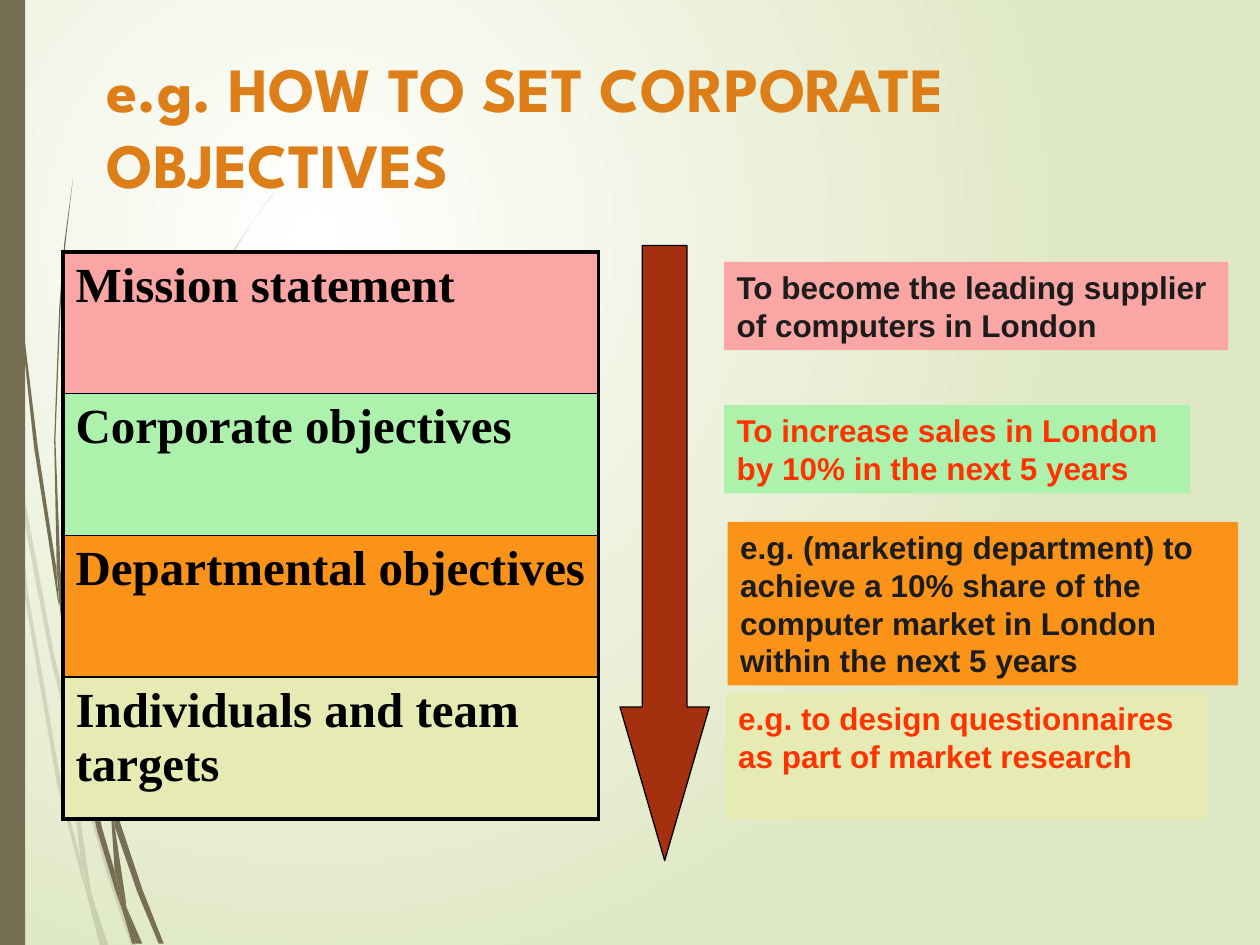
from dataclasses import dataclass

import pptx
import pptx.dml.color
import pptx.enum.dml
import pptx.enum.shapes
import pptx.enum.text
import pptx.oxml.ns
import pptx.util
from lxml import etree
from pptx.util import Cm

BROWN = "766F54"
BLACK = "000000"
DARK = "1C1C1C"
RED = "FF3300"
HUNDREDTH_INCH = Cm(2.54) / 100

# Outlines of the grass blades, in hundredths of an inch.
FAINT_BLADES = [
    [(8, 350), (6, 322), (0, 282), (0, 299), (7, 344)],
    [(40, 522), (59, 599), (59, 586), (43, 520), (10, 345), (12, 376)],
    [(64, 607), (61, 596), (61, 610), (85, 694), (104, 750), (108, 750), (88, 692)],
    [(83, 750), (86, 750), (73, 711)],
    [(64, 683), (48, 619), (22, 469), (12, 376), (8, 350), (19, 470), (45, 621),
     (64, 693), (70, 714), (69, 707)],
    [(58, 599), (60, 646), (64, 683), (67, 692), (73, 711), (72, 706), (63, 646),
     (61, 610), (61, 608)],
    [(61, 584), (76, 462), (111, 349), (159, 245), (187, 198), (201, 175), (217, 154),
     (217, 153), (201, 175), (186, 197), (158, 244), (110, 348), (75, 461), (59, 584),
     (59, 586), (61, 596)],
    [(70, 714), (79, 750), (82, 750)],
    [(61, 608), (61, 610), (61, 596), (59, 586), (58, 599)],
    [(67, 692), (65, 683), (69, 707), (70, 714), (82, 750), (83, 750), (73, 711)],
]
SOLID_BLADES = [
    [(5, 110), (14, 233), (27, 355), (46, 477), (47, 481), (45, 457), (45, 453),
     (30, 355), (15, 232), (6, 109), (4, 48), (3, 0), (2, 0), (3, 48)],
    [(73, 592), (88, 645), (88, 633), (88, 631), (77, 590), (50, 472), (53, 505)],
    [(94, 649), (91, 641), (91, 656), (109, 708), (126, 749), (130, 749), (113, 706)],
    [(91, 691), (81, 657), (60, 556), (53, 505), (47, 477), (56, 557), (77, 659),
     (92, 708), (97, 722), (96, 717)],
    [(50, 472), (48, 453), (44, 349), (48, 245), (52, 193), (58, 141), (51, 193),
     (47, 245), (43, 349), (45, 449), (49, 472)],
    [(110, 749), (113, 749), (100, 719)],
    [(47, 477), (53, 505), (50, 472), (49, 472), (45, 449), (45, 453)],
    [(91, 633), (103, 552), (131, 476), (169, 406), (191, 374), (203, 359), (216, 344),
     (215, 344), (203, 358), (191, 373), (168, 405), (129, 474), (101, 551), (88, 631),
     (91, 641)],
    [(97, 722), (105, 749), (108, 749)],
    [(88, 645), (91, 691), (96, 706), (100, 719), (100, 716), (91, 656), (90, 651)],
    [(88, 645), (90, 651), (91, 656), (91, 641), (88, 631), (88, 633)],
    [(96, 706), (91, 691), (96, 717), (97, 722), (108, 749), (110, 749), (100, 719)],
]


@dataclass
class Box:
    left: float
    top: float
    width: float
    height: float

    def lengths(self) -> list[Cm]:
        return [Cm(value) for value in (self.left, self.top, self.width, self.height)]


@dataclass
class Level:
    name: str
    fill: str
    example: str
    example_color: str
    example_box: Box


LEVELS = [
    Level("Mission statement", "FAA6A4",
          "To become the leading supplier of computers in London",
          DARK, Box(14.6, 5.28, 10.16, 1.78)),
    Level("Corporate objectives", "ACF2AC",
          "To increase sales in London by 10% in the next 5 years",
          RED, Box(14.6, 8.17, 9.4, 1.78)),
    Level("Departmental objectives", "FB9318",
          "e.g. (marketing department) to achieve a 10% share of the computer market "
          "in London within the next 5 years",
          DARK, Box(14.67, 10.52, 10.29, 3.3)),
    Level("Individuals and team targets", "E6EBB3",
          "e.g. to design questionnaires as part of market research",
          RED, Box(14.63, 13.97, 9.7, 2.54)),
]


def rgb(color: str) -> pptx.dml.color.RGBColor:
    return pptx.dml.color.RGBColor.from_string(color)


def add_element(parent, tag: str, **attributes: str):
    element = etree.SubElement(parent, pptx.oxml.ns.qn(tag))
    for name, value in attributes.items():
        element.set(name, value)
    return element


def write_text(text_frame, text: str, font_name: str, size: float, color: str) -> None:
    """Fill a frame with one bold, left-aligned paragraph."""
    text_frame.word_wrap = True
    text_frame.text = text
    paragraph = text_frame.paragraphs[0]
    paragraph.alignment = pptx.enum.text.PP_ALIGN.LEFT
    font = paragraph.runs[0].font
    font.name, font.size, font.bold = font_name, pptx.util.Pt(size), True
    font.color.rgb = rgb(color)


def paint(shape, fill: str) -> None:
    """Give a shape a flat fill without line or shadow."""
    shape.shadow.inherit = False
    shape.fill.solid()
    shape.fill.fore_color.rgb = rgb(fill)
    shape.line.fill.background()


def paint_background(slide) -> None:
    """Radial gradient centred in the upper left quarter."""
    fill = slide.background.fill
    fill.gradient()
    for stop, color in zip(fill.gradient_stops, ("FFFFFF", "DFE8C4")):
        stop.color.rgb = rgb(color)
    gradient = slide.element.find(".//" + pptx.oxml.ns.qn("a:gradFill"))
    gradient.remove(gradient.find(pptx.oxml.ns.qn("a:lin")))
    circle = add_element(gradient, "a:path", path="circle")
    add_element(circle, "a:fillToRect", l="50000", t="50000", r="100000", b="100000")


def add_blade(slide, points: list[tuple[int, int]], opacity: int) -> None:
    builder = slide.shapes.build_freeform(*points[0], scale=HUNDREDTH_INCH)
    builder.add_line_segments(points[1:], close=True)
    shape = builder.convert_to_shape()
    paint(shape, BROWN)
    if opacity < 100:
        color = shape.element.spPr.find(".//" + pptx.oxml.ns.qn("a:srgbClr"))
        add_element(color, "a:alpha", val=str(opacity * 1000))


def add_box(slide, box: Box, fill: str,
            kind=pptx.enum.shapes.MSO_SHAPE.RECTANGLE):
    shape = slide.shapes.add_shape(kind, *box.lengths())
    paint(shape, fill)
    return shape


def set_borders(cell, top: float, bottom: float) -> None:
    """Border widths in points; the sides are always thick."""
    properties = cell._tc.get_or_add_tcPr()
    widths = {"a:lnL": 2.25, "a:lnR": 2.25, "a:lnT": top, "a:lnB": bottom}
    for tag, width in widths.items():
        line = add_element(properties, tag, w=str(pptx.util.Pt(width)))
        add_element(add_element(line, "a:solidFill"), "a:srgbClr", val=BLACK)


def add_level_table(slide, box: Box) -> None:
    table = slide.shapes.add_table(len(LEVELS), 1, *box.lengths()).table
    table.first_row = table.horz_banding = False
    last = len(LEVELS) - 1
    for index, level in enumerate(LEVELS):
        table.rows[index].height = Cm(box.height / len(LEVELS))
        cell = table.cell(index, 0)
        write_text(cell.text_frame, level.name, "Times New Roman", 28, BLACK)
        set_borders(cell, 2.25 if index == 0 else 1, 2.25 if index == last else 1)
        cell.fill.solid()
        cell.fill.fore_color.rgb = rgb(level.fill)


def add_title(slide, box: Box, text: str) -> None:
    frame = slide.shapes.add_textbox(*box.lengths()).text_frame
    write_text(frame, text, "League Spartan", 36, "DE7E18")
    frame.vertical_anchor = pptx.enum.text.MSO_ANCHOR.MIDDLE


def add_down_arrow(slide, box: Box) -> None:
    arrow = add_box(slide, box, "A53010", pptx.enum.shapes.MSO_SHAPE.DOWN_ARROW)
    arrow.adjustments[0], arrow.adjustments[1] = 0.5, 1.72
    arrow.line.color.rgb = rgb(BLACK)
    arrow.line.width = pptx.util.Pt(0.75)


def main() -> None:
    presentation = pptx.Presentation()
    presentation.slide_width, presentation.slide_height = Cm(25.4), Cm(19.05)
    slide = presentation.slides.add_slide(presentation.slide_layouts[6])
    paint_background(slide)
    for blades, opacity in ((FAINT_BLADES, 20), (SOLID_BLADES, 100)):
        for points in blades:
            add_blade(slide, points, opacity)
    add_box(slide, Box(0, 0, 0.51, 19.05), BROWN)
    add_title(slide, Box(1.9, 0.84, 21.6, 3.38), "e.g. HOW TO SET CORPORATE OBJECTIVES")
    add_level_table(slide, Box(1.27, 5.08, 10.8, 11.43))
    add_down_arrow(slide, Box(12.5, 4.95, 1.8, 12.4))
    for level in LEVELS:
        shape = add_box(slide, level.example_box, level.fill)
        write_text(shape.text_frame, level.example, "Arial", 18, level.example_color)
        shape.text_frame.vertical_anchor = pptx.enum.text.MSO_ANCHOR.TOP
    presentation.save("out.pptx")


if __name__ == "__main__":
    main()
